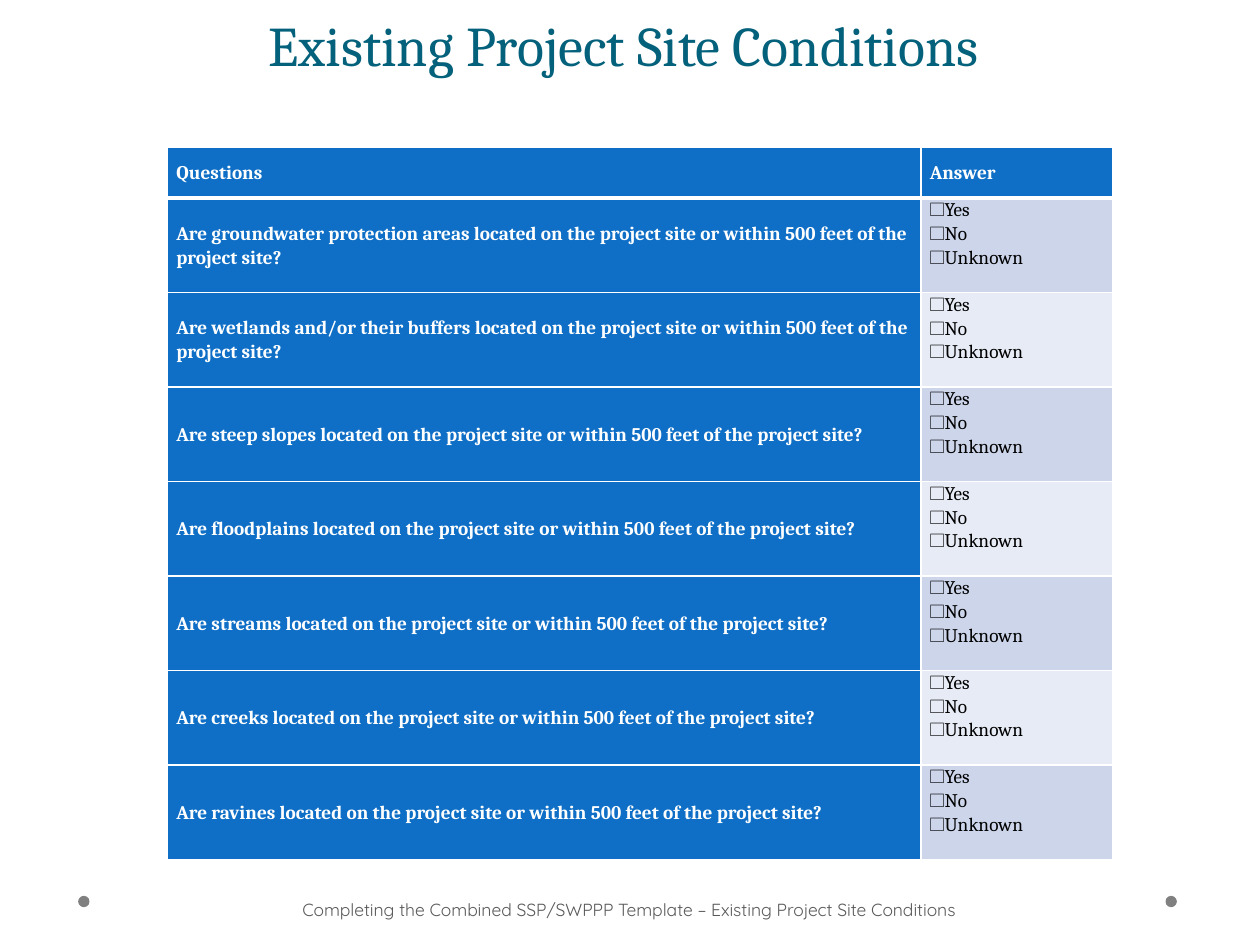
from lxml import etree
from pptx import Presentation
from pptx.dml.color import RGBColor
from pptx.enum.shapes import MSO_SHAPE
from pptx.enum.text import MSO_ANCHOR, PP_ALIGN
from pptx.oxml.ns import qn
from pptx.util import Inches, Pt

OVAL = MSO_SHAPE.OVAL
TOP, MIDDLE, BOTTOM = MSO_ANCHOR.TOP, MSO_ANCHOR.MIDDLE, MSO_ANCHOR.BOTTOM
LEFT, CENTER = PP_ALIGN.LEFT, PP_ALIGN.CENTER

WHITE = RGBColor(0xFF, 0xFF, 0xFF)
BLACK = RGBColor(0x00, 0x00, 0x00)
TEAL = RGBColor(0x04, 0x61, 0x7B)
BLUE = RGBColor(0x0F, 0x6F, 0xC6)
BANDS = RGBColor(0xCC, 0xD5, 0xEA), RGBColor(0xE7, 0xEB, 0xF5)
DOT_GRAY = RGBColor(0x80, 0x80, 0x80)
TEXT_GRAY = RGBColor(0x59, 0x59, 0x59)

TITLE = {"name": "Cambria", "size": Pt(32), "bold": False}
STRONG = {"name": "Cambria", "size": Pt(11), "bold": True}
PLAIN = {"name": "Cambria", "size": Pt(11), "bold": False}
FOOTER = {"name": "Quicksand", "size": Pt(10)}

SUBJECTS = ["groundwater protection areas", "wetlands and/or their buffers",
            "steep slopes", "floodplains", "streams", "creeks", "ravines"]
OPTIONS = ["☐Yes", "☐No", "☐Unknown"]


class SlideBuilder:
    def __init__(self, prs):
        self.s = prs.slides.add_slide(prs.slide_layouts[5])

    def add_lines(self, tf, lines, font, color, align=LEFT, spacing=None):
        for i, line in enumerate(lines):
            p = tf.add_paragraph() if i else tf.paragraphs[0]
            p.alignment = align
            p.line_spacing = spacing
            r = p.add_run()
            r.text = line
            for key, value in font.items():
                setattr(r.font, key, value)
            r.font.color.rgb = color

    def title(self, text, x, y, w, h):
        sp = self.s.shapes.title
        sp.left, sp.top, sp.width, sp.height = map(Inches, (x, y, w, h))
        sp.text_frame.vertical_anchor = BOTTOM
        self.add_lines(sp.text_frame, [text], TITLE, TEAL, CENTER, Pt(58))

    def dot(self, x, y, size):
        sp = self.s.shapes.add_shape(OVAL, *map(Inches, (x, y, size, size)))
        sp.shadow.inherit = False
        sp.fill.solid()
        sp.fill.fore_color.rgb = DOT_GRAY
        sp.line.fill.background()

    def footer(self, text, x, y, w, h):
        tf = self.s.shapes.add_textbox(*map(Inches, (x, y, w, h))).text_frame
        tf.word_wrap = True
        tf.vertical_anchor = MIDDLE
        tf.margin_left = Inches(0.05)
        self.add_lines(tf, [text], FOOTER, TEXT_GRAY, CENTER)

    def table(self, x, y, widths, heights):
        size = map(Inches, (x, y, sum(widths), sum(heights)))
        table = self.s.shapes.add_table(len(heights), len(widths), *size).table
        for column, width in zip(table.columns, widths):
            column.width = Inches(width)
        for row, height in zip(table.rows, heights):
            row.height = Inches(height)
        return table

    def cell(self, cell, lines, fill, font=STRONG, color=WHITE, anchor=MIDDLE,
             top=1, bottom=1):
        """Fill one table cell; top and bottom are border widths in points."""
        cell.margin_left = cell.margin_right = Inches(0.07)
        cell.margin_top = cell.margin_bottom = 0
        cell.vertical_anchor = anchor
        self.add_lines(cell.text_frame, lines, font, color, spacing=1.07)
        tc_pr = cell._tc.get_or_add_tcPr()
        for side, width in zip("LRTB", (1, 1, top, bottom)):
            ln = etree.SubElement(tc_pr, qn(f"a:ln{side}"), w=str(Pt(width)))
            solid = etree.SubElement(ln, qn("a:solidFill"))
            etree.SubElement(solid, qn("a:srgbClr"), val=str(WHITE))
        cell.fill.solid()
        cell.fill.fore_color.rgb = fill


def main():
    prs = Presentation()
    prs.slide_width, prs.slide_height = Inches(10), Inches(7.5)
    b = SlideBuilder(prs)
    for x in (9.25, 0.62):
        b.dot(x, 7.11, 0.09)
    b.title("Existing Project Site Conditions ", 0.5, 0, 9, 0.67)

    table = b.table(1.33, 1.17, [5.98, 1.52], [0.4] + [0.75] * len(SUBJECTS))
    for col, heading in enumerate(["Questions", "Answer"]):
        b.cell(table.cell(0, col), [heading], BLUE, bottom=3)
    for row, subject in enumerate(SUBJECTS, 1):
        question = (f"Are {subject} located on the project site "
                    "or within 500 feet of the project site?")
        top = 3 if row == 1 else 1
        b.cell(table.cell(row, 0), [question], BLUE, top=top)
        b.cell(table.cell(row, 1), OPTIONS, BANDS[(row - 1) % 2],
               PLAIN, BLACK, TOP, top=top)

    b.footer("Completing the Combined SSP/SWPPP Template – "
             "Existing Project Site Conditions", 0.75, 7.02, 8.53, 0.4)
    prs.save("out.pptx")


if __name__ == "__main__":
    main()
